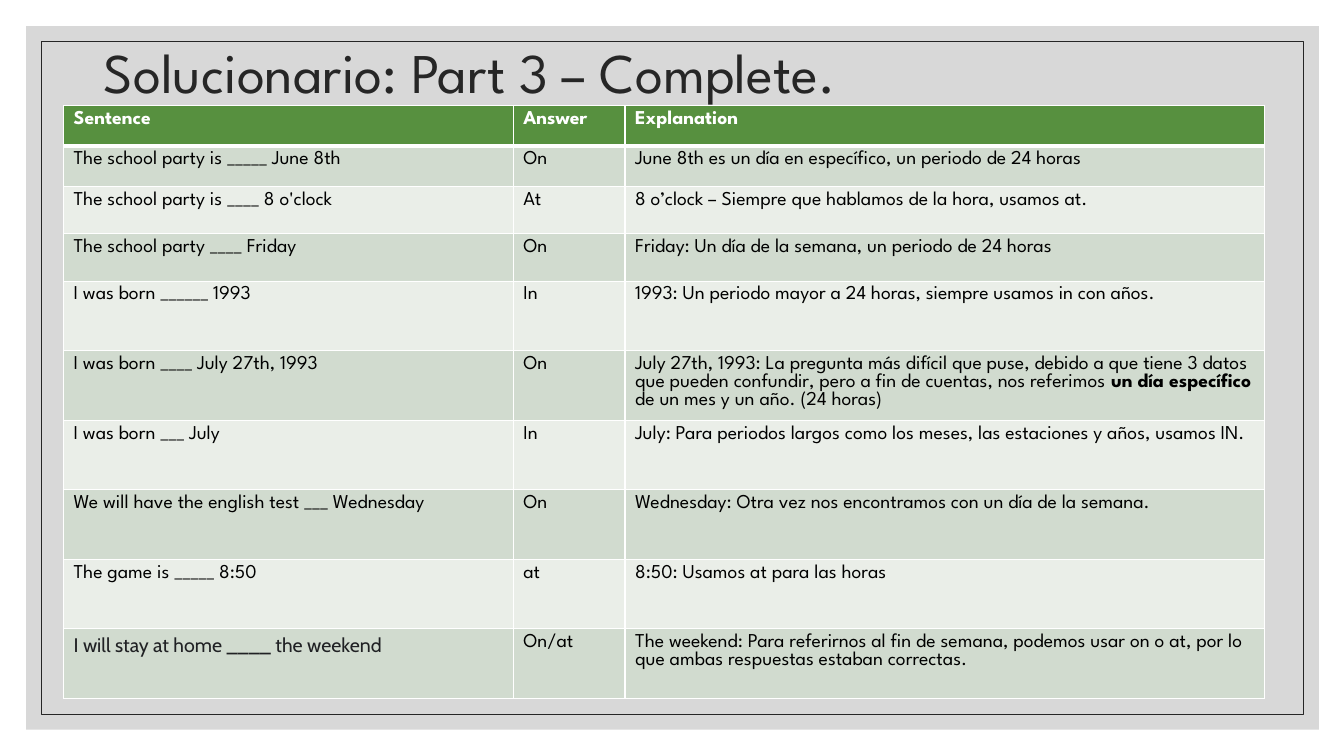
from lxml import etree
from pptx import Presentation
from pptx.dml.color import RGBColor
from pptx.enum.shapes import MSO_SHAPE
from pptx.enum.text import MSO_ANCHOR, MSO_AUTO_SIZE, PP_ALIGN
from pptx.oxml.ns import qn
from pptx.util import Pt

PX = 9144  # EMU per px, 100 px to the inch
SLIDE_W, SLIDE_H = 1333, 750
TITLE_ONLY = 5
RECTANGLE = MSO_SHAPE.RECTANGLE
MIDDLE, LEFT = MSO_ANCHOR.MIDDLE, PP_ALIGN.LEFT
NO_AUTOFIT = MSO_AUTO_SIZE.NONE

MAIN_FONT, WEEKEND_FONT = "League Spartan", "Cabin"
COLORS = {
    "panel": "BFBFBF",
    "ink": "262626",
    "header": "57903F",
    "band_dark": "D1DBCF",
    "band_light": "EAEEE8",
    "white": "FFFFFF",
    "black": "000000",
    "weekend": "202124",
}

COLUMN_WIDTHS = [446, 111, 634]
ROW_HEIGHTS = [40, 40, 47, 47] + [69] * 6
# Text between ** marks is bold
ROWS = [
    ("Sentence", "Answer", "Explanation"),
    ("The school party is _____ June 8th", "On",
     "June 8th es un día en específico, un periodo de 24 horas"),
    ("The school party is ____ 8 o'clock", "At",
     "8 o’clock – Siempre que hablamos de la hora, usamos at."),
    ("The school party ____ Friday", "On",
     "Friday: Un día de la semana, un periodo de 24 horas"),
    ("I was born ______ 1993", "In",
     "1993: Un periodo mayor a 24 horas, siempre usamos in con años."),
    ("I was born ____ July 27th, 1993", "On",
     "July 27th, 1993: La pregunta más difícil que puse, debido a que tiene "
     "3 datos que pueden confundir, pero a fin de cuentas, nos referimos "
     "**un día específico **de un mes y un año. (24 horas)"),
    ("I was born ___ July", "In",
     "July: Para periodos largos como los meses, las estaciones y años, usamos IN."),
    ("We will have the english test ___ Wednesday", "On",
     "Wednesday: Otra vez nos encontramos con un día de la semana."),
    ("The game is _____ 8:50", "at", "8:50: Usamos at para las horas"),
    ("I will stay at home ____ the weekend", "On/at",
     "The weekend: Para referirnos al fin de semana, podemos usar on o at, "
     "por lo que ambas respuestas estaban correctas."),
]


def rgb(name):
    return RGBColor.from_string(COLORS[name])


def scaled(*lengths):
    return [length * PX for length in lengths]


def style_run(run, size, color, font=MAIN_FONT, bold=False):
    run.font.size = Pt(size)
    run.font.name = font
    run.font.bold = bold
    run.font.color.rgb = rgb(color)


def add_backdrop(slide, left, top, width, height):
    """Translucent grey panel with a thin frame inside it."""
    panel = slide.shapes.add_shape(RECTANGLE, *scaled(left, top, width, height))
    panel.shadow.inherit = False
    panel.fill.solid()
    panel.fill.fore_color.rgb = rgb("panel")
    panel.line.fill.background()
    panel_color = panel.fill._xPr.find(qn("a:solidFill"))[0]
    etree.SubElement(panel_color, qn("a:alpha"), val="60000")

    inset = 15
    frame = slide.shapes.add_shape(RECTANGLE, *scaled(
        left + inset, top + inset, width - 2 * inset, height - 2 * inset))
    frame.shadow.inherit = False
    frame.fill.background()
    frame.line.color.rgb = rgb("ink")
    frame.line.width = Pt(0.5)


def place_title(slide, left, top, width, height):
    title = slide.shapes.title
    title.left, title.top, title.width, title.height = scaled(left, top, width, height)
    heading = title.text_frame
    heading.text = "Solucionario: Part 3 – Complete."
    heading.vertical_anchor = MIDDLE
    heading.auto_size = NO_AUTOFIT
    heading.word_wrap = True
    heading.paragraphs[0].alignment = LEFT
    heading.paragraphs[0].line_spacing = 0.9
    style_run(heading.paragraphs[0].runs[0], 40, "ink")
    # Bring the title in front of the backdrop
    slide.shapes._spTree.append(title._element)


def set_borders(cell, row):
    thick_side = {0: "B", 1: "T"}.get(row)
    properties = cell._tc.get_or_add_tcPr()
    for side in "LRTB":
        width = Pt(3 if side == thick_side else 1)
        border = etree.SubElement(properties, qn(f"a:ln{side}"), w=str(width))
        fill = etree.SubElement(border, qn("a:solidFill"))
        etree.SubElement(fill, qn("a:srgbClr"), val=COLORS["white"])


def fill_cell(cell, row, column, words):
    header = row == 0
    weekend = row == len(ROWS) - 1 and column == 0
    set_borders(cell, row)
    cell.fill.solid()
    band = "band_dark" if row % 2 else "band_light"
    cell.fill.fore_color.rgb = rgb("header" if header else band)

    color = "white" if header else "weekend" if weekend else "black"
    font = WEEKEND_FONT if weekend else MAIN_FONT
    paragraph = cell.text_frame.paragraphs[0]
    for index, part in enumerate(words.split("**")):
        run = paragraph.add_run()
        run.text = part
        style_run(run, 14, color, font, bold=header or index % 2 == 1)


def add_answer_table(slide, left, top):
    answers = slide.shapes.add_table(
        len(ROWS), len(COLUMN_WIDTHS),
        *scaled(left, top, sum(COLUMN_WIDTHS), sum(ROW_HEIGHTS))).table
    for column, width in zip(answers.columns, COLUMN_WIDTHS):
        column.width = width * PX
    for row, height in zip(answers.rows, ROW_HEIGHTS):
        row.height = height * PX
    for row, entries in enumerate(ROWS):
        for column, words in enumerate(entries):
            fill_cell(answers.cell(row, column), row, column, words)


def main():
    deck = Presentation()
    deck.slide_width, deck.slide_height = scaled(SLIDE_W, SLIDE_H)
    slide = deck.slides.add_slide(deck.slide_layouts[TITLE_ONLY])
    add_backdrop(slide, 26, 26, 1282, 698)
    place_title(slide, 93, 0, 1100, 150)
    add_answer_table(slide, 63, 105)
    deck.save("out.pptx")


if __name__ == "__main__":
    main()
